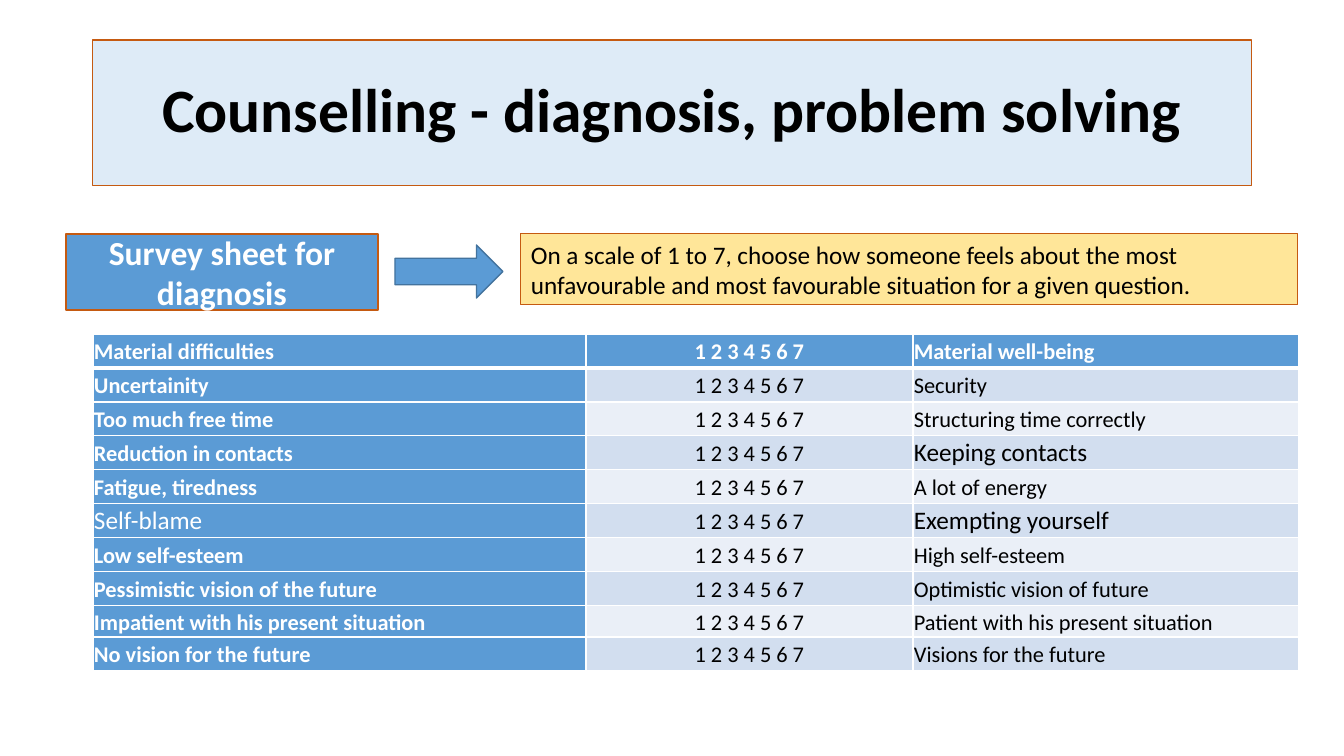
"""Build the counselling survey slide with its ten-row rating table."""
from dataclasses import dataclass

from lxml.etree import SubElement
from pptx import Presentation
from pptx.dml.color import RGBColor
from pptx.enum.shapes import MSO_SHAPE as Shape
from pptx.enum.text import MSO_ANCHOR as Anchor, PP_ALIGN as Align
from pptx.oxml.ns import qn
from pptx.util import Pt

EMU_PER_PX = 914400 / 100.8
SCALE = "1 2 3 4 5 6 7"
COLUMN_WIDTHS = (493, 327, 386)
ROW_HEIGHT = 34
SHORT_ROW, SHORT_HEIGHT = 8, 25
QUESTIONS = (
    ("Material difficulties", "Material well-being"),
    ("Uncertainity", "Security"),
    ("Too much free time", "Structuring time correctly"),
    ("Reduction in contacts", "Keeping contacts"),
    ("Fatigue, tiredness", "A lot of energy"),
    ("Self-blame", "Exempting yourself"),
    ("Low self-esteem", "High self-esteem"),
    ("Pessimistic vision of the future", "Optimistic vision of future"),
    ("Impatient with his present situation", "Patient with his present situation"),
    ("No vision for the future", "Visions for the future"),
)
LARGE_ENTRIES = {"Keeping contacts", "Self-blame", "Exempting yourself"}


@dataclass(frozen=True)
class Theme:
    """Colours, font and type sizes of the slide."""

    font: str = "Calibri"
    white: str = "FFFFFF"
    black: str = "000000"
    blue: str = "5B9BD5"
    dark_blue: str = "43739E"
    pale_blue: str = "DEEBF7"
    orange: str = "C55A11"
    yellow: str = "FFE699"
    bands: tuple = ("EAEFF7", "D2DEEF")
    title_size: int = 44
    badge_size: int = 24
    large_size: int = 18
    table_size: int = 16


THEME = Theme()


def px(length):
    """Turn pixels into EMU."""
    return round(length * EMU_PER_PX)


def paint(fill, color):
    """Give a fill one solid colour."""
    fill.solid()
    fill.fore_color.rgb = RGBColor.from_string(color)


def write(frame, text, size, color, bold=False, align=Align.LEFT):
    """Put one styled paragraph in a text frame and return it."""
    frame.word_wrap = True
    paragraph = frame.paragraphs[0]
    paragraph.text = text
    paragraph.alignment = align
    font = paragraph.font
    font.name, font.size, font.bold = THEME.font, Pt(size), bold
    font.color.rgb = RGBColor.from_string(color)
    return paragraph


def add_box(slide, kind, box, fill, line, line_width):
    """Add a filled and outlined preset shape."""
    shape = slide.shapes.add_shape(kind, *map(px, box))
    shape.shadow.inherit = False
    paint(shape.fill, fill)
    paint(shape.line.fill, line)
    shape.line.width = Pt(line_width)
    shape.text_frame.vertical_anchor = Anchor.MIDDLE
    return shape


def add_borders(cell, top, bottom):
    """Draw white borders around a table cell, widths in points."""
    properties = cell._tc.get_or_add_tcPr()
    for side, width in (("L", 1), ("R", 1), ("T", top), ("B", bottom)):
        line = SubElement(properties, qn(f"a:ln{side}"), w=str(Pt(width)))
        fill = SubElement(line, qn("a:solidFill"))
        SubElement(fill, qn("a:srgbClr"), val=THEME.white)


def fill_cell(cell, text, row, column):
    """Style one survey cell according to its place in the table."""
    header = row == 0
    strong = header or column == 0
    large = text in LARGE_ENTRIES
    add_borders(cell, top=3 if row == 1 else 1, bottom=3 if header else 1)
    paint(cell.fill, THEME.blue if strong else THEME.bands[row % 2])
    cell.margin_left = cell.margin_right = px(1)
    cell.margin_top = cell.margin_bottom = px(1)
    cell.vertical_anchor = Anchor.MIDDLE
    paragraph = write(
        cell.text_frame,
        text,
        THEME.large_size if large else THEME.table_size,
        THEME.white if strong else THEME.black,
        bold=strong and not large,
        align=Align.CENTER if column == 1 else Align.LEFT,
    )
    if not large:
        paragraph.line_spacing = 1.07
        paragraph.space_after = Pt(8)


def add_survey(slide, left, top):
    """Add the table of opposite statements and their scale."""
    heights = [ROW_HEIGHT] * len(QUESTIONS)
    heights[SHORT_ROW] = SHORT_HEIGHT
    box = (left, top, sum(COLUMN_WIDTHS), sum(heights))
    table = slide.shapes.add_table(
        len(QUESTIONS), len(COLUMN_WIDTHS), *map(px, box)
    ).table
    table.horz_banding = False
    for column, width in zip(table.columns, COLUMN_WIDTHS):
        column.width = px(width)
    for row, (negative, positive) in enumerate(QUESTIONS):
        table.rows[row].height = px(heights[row])
        for column, text in enumerate((negative, SCALE, positive)):
            fill_cell(table.cell(row, column), text, row, column)


def main():
    """Build and save the slide."""
    presentation = Presentation()
    presentation.slide_width, presentation.slide_height = px(1344), px(756)
    slide = presentation.slides.add_slide(presentation.slide_layouts[6])

    title = add_box(slide, Shape.RECTANGLE, (93, 40, 1159, 146),
                    THEME.pale_blue, THEME.orange, 0.75)
    heading = write(title.text_frame, "Counselling - diagnosis, problem solving",
                    THEME.title_size, THEME.black, bold=True, align=Align.CENTER)
    heading.line_spacing = 0.9

    badge = add_box(slide, Shape.RECTANGLE, (66, 234, 312, 76),
                    THEME.blue, THEME.orange, 1)
    write(badge.text_frame, "Survey sheet for diagnosis",
          THEME.badge_size, THEME.white, bold=True, align=Align.CENTER)

    add_box(slide, Shape.RIGHT_ARROW, (395, 245, 108, 53),
            THEME.blue, THEME.dark_blue, 1)

    note = add_box(slide, Shape.RECTANGLE, (521, 234, 777, 71),
                   THEME.yellow, THEME.orange, 0.75)
    note.text_frame.vertical_anchor = Anchor.TOP
    write(note.text_frame,
          "On a scale of 1 to 7, choose how someone feels about the most "
          "unfavourable and most favourable situation for a given question.",
          THEME.large_size, THEME.black)

    add_survey(slide, 93, 334)
    presentation.save("out.pptx")


if __name__ == "__main__":
    main()
